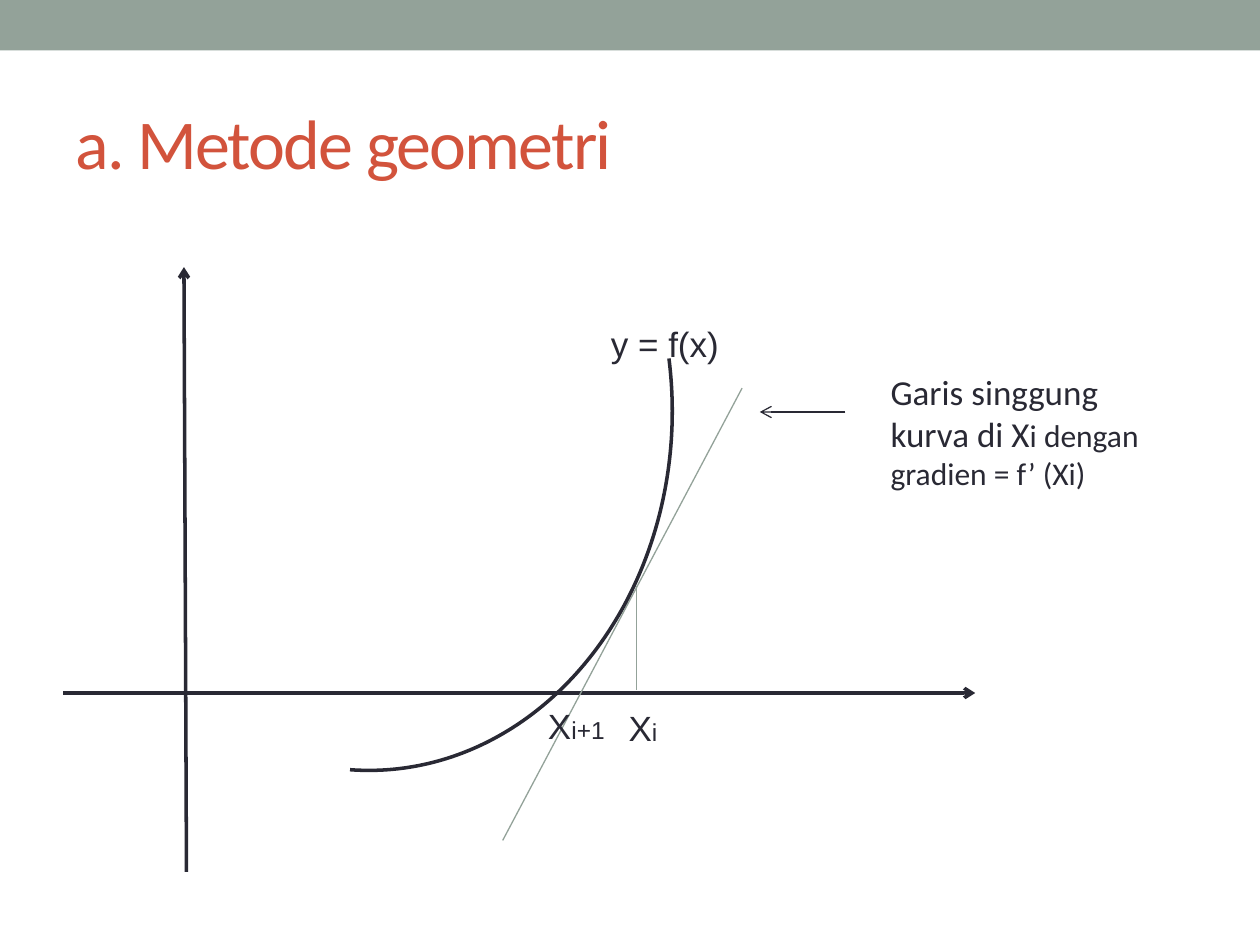
from lxml.etree import SubElement
from pptx import Presentation
from pptx.dml.color import RGBColor
from pptx.enum.shapes import MSO_CONNECTOR, MSO_SHAPE
from pptx.enum.text import MSO_ANCHOR, MSO_AUTO_SIZE
from pptx.oxml.ns import qn
from pptx.util import Inches, Pt

INK = RGBColor(0x29, 0x29, 0x34)
SAGE = RGBColor(0x93, 0xA2, 0x99)
RUST = RGBColor(0xD2, 0x53, 0x3C)
ADJUSTMENT_PER_DEGREE = 0.6


def apply_format(target, values):
    for name, value in values.items():
        setattr(target, name, value)


def add_text(shapes, box, spans, font, color=INK, spacing=None, **frame_format):
    text_box = shapes.add_textbox(*map(Inches, box))
    frame = text_box.text_frame
    apply_format(frame, {"word_wrap": True, **frame_format})
    para = frame.paragraphs[0]
    for text, size in spans:
        span = para.add_run()
        span.text = text
        apply_format(span.font, {"name": font, "size": Pt(size)})
        span.font.color.rgb = color
        if spacing is not None:
            span._r.get_or_add_rPr().set("spc", str(spacing))


def add_line(shapes, start, end, color, width, arrow=False):
    line = shapes.add_connector(
        MSO_CONNECTOR.STRAIGHT, *map(Inches, (*start, *end))
    )
    line.line.color.rgb = color
    line.line.width = Pt(width)
    if arrow:
        SubElement(line.line._get_or_add_ln(), qn("a:tailEnd"), type="arrow")
    SubElement(line._element.spPr, qn("a:effectLst"))


def add_band(page, box):
    band = page.shapes.add_shape(MSO_SHAPE.RECTANGLE, *map(Inches, box))
    band.shadow.inherit = False
    band.fill.solid()
    band.fill.fore_color.rgb = SAGE
    band.line.fill.background()


def add_title(page, box):
    add_text(
        page.shapes, box, [("a. Metode geometri", 40)], "Calibri", RUST,
        spacing=-100, vertical_anchor=MSO_ANCHOR.MIDDLE,
    )


def add_graph(page, box):
    left, top, width, height = box
    right, bottom = left + width, top + height
    axis_y = 5.5
    tangent_x = 5.05
    shapes = page.shapes.add_group_shape().shapes

    lines = [
        ((left, axis_y), (7.74, axis_y), INK, 2, True),
        ((1.48, bottom), (1.46, top), INK, 2, True),
        ((5.89, 3.08), (3.99, 6.67), SAGE, 0.75, False),
        ((tangent_x, 4.65), (tangent_x, axis_y - 0.02), SAGE, 0.75, False),
        ((6.71, 3.27), (6.03, 3.27), INK, 0.75, True),
    ]
    for line in lines:
        add_line(shapes, *line)

    note_left = 6.97
    labels = [
        ((4.75, 2.51, 1.1, 0.44), [("y = f(x)", 20)], "Arial"),
        (
            (note_left, 2.89, right - note_left, 1.08),
            [("Garis singgung kurva di X", 20), ("i dengan gradien = f’ (Xi)", 18)],
            "Calibri",
        ),
        ((4.25, 5.54, 0.88, 0.4), [("X", 20), ("i+1", 14)], "Arial"),
        ((4.89, 5.56, 0.44, 0.4), [("X", 20), ("i", 14)], "Arial"),
    ]
    for label in labels:
        add_text(shapes, *label, auto_size=MSO_AUTO_SIZE.SHAPE_TO_FIT_TEXT)


def add_curve(page, box):
    curve = page.shapes.add_shape(MSO_SHAPE.ARC, *map(Inches, box))
    curve.shadow.inherit = False
    curve.rotation = 90
    for index, degrees in enumerate((260, 3.07)):
        curve.adjustments[index] = degrees * ADJUSTMENT_PER_DEGREE
    curve.fill.background()
    curve.line.color.rgb = INK
    curve.line.width = Pt(2)


def main():
    deck = Presentation()
    apply_format(deck, {"slide_width": Inches(10), "slide_height": Inches(7.5)})
    page = deck.slides.add_slide(deck.slide_layouts[6])
    add_band(page, (0, 0, 10, 0.4))
    add_title(page, (0.5, 0.58, 9, 1.08))
    add_graph(page, (0.5, 2.12, 9, 4.8))
    add_curve(page, (0.08, 0.86, 5.7, 4.81))
    deck.save("out.pptx")


if __name__ == "__main__":
    main()
